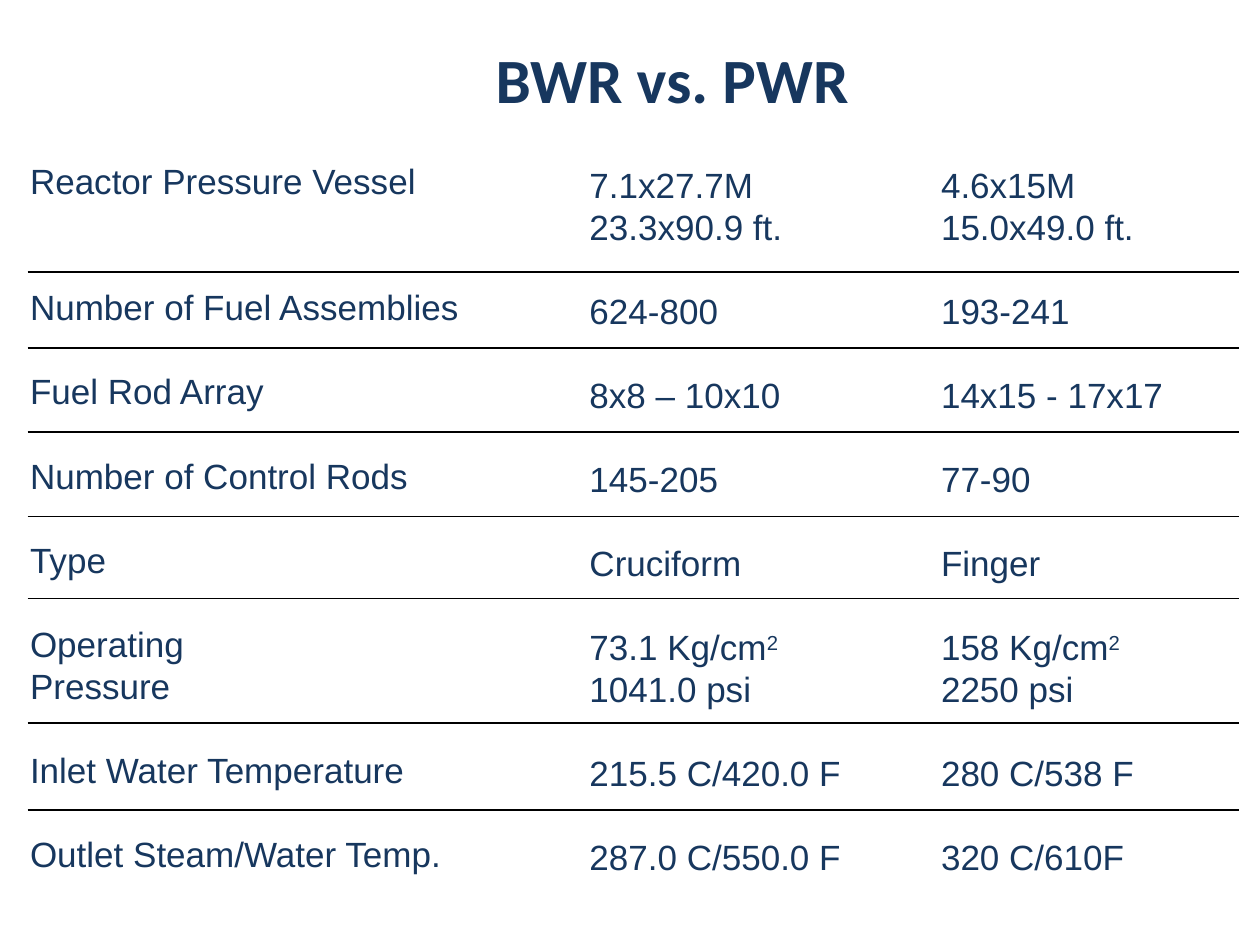
from pptx import Presentation
from pptx import util as u
from pptx.dml import color
from pptx.enum import shapes, text
from pptx.oxml import ns
from lxml import etree

HUES = {"navy": "17375E", "black": "000000"}
HEAD = {"name": "Calibri", "size": u.Pt(36), "bold": True}
BODY = {"name": "Arial", "size": u.Pt(20)}
PITCH = 24


def hue(name):
    return color.RGBColor.from_string(HUES[name])


class Deck:
    def __init__(self):
        self.show = Presentation()
        self.show.slide_width = u.Pt(720)
        self.show.slide_height = u.Pt(540)
        self.slide = self.show.slides.add_slide(self.show.slide_layouts[6])

    def frame(self, box, form):
        frame = self.slide.shapes.add_textbox(*map(u.Pt, box)).text_frame
        for key, val in form.items():
            setattr(frame, key, val)
        return frame

    def run(self, para, words, style):
        run = para.add_run()
        run.text = words
        for key, val in style.items():
            setattr(run.font, key, val)
        run.font.color.rgb = hue("navy")
        return run

    def title(self, box, words):
        frame = self.frame(box, {"word_wrap": True,
                                 "vertical_anchor": text.MSO_ANCHOR.MIDDLE})
        para = frame.paragraphs[0]
        para.alignment = text.PP_ALIGN.CENTER
        self.run(para, words, HEAD)

    def column(self, box, cells):
        frame = self.frame(box, {"word_wrap": False,
                                 "auto_size": text.MSO_AUTO_SIZE.SHAPE_TO_FIT_TEXT})
        for row, (gap, lines) in enumerate(cells):
            for num, line in enumerate(lines.split("\n")):
                first = row == num == 0
                para = frame.paragraphs[0] if first else frame.add_paragraph()
                para.line_spacing = u.Pt(PITCH)
                para.space_before = u.Pt(0 if first or num else gap * PITCH)
                base, _, power = line.partition("^")
                self.run(para, base, BODY)
                if power:
                    run = self.run(para, power, BODY)
                    run.font._element.set("baseline", "30000")

    def rule(self, left, right, top):
        line = self.slide.shapes.add_connector(
            shapes.MSO_CONNECTOR.STRAIGHT, *map(u.Pt, (left, top, right, top)))
        line.line.color.rgb = hue("black")
        line.line.width = u.Pt(1)
        etree.SubElement(line._element.spPr, ns.qn("a:effectLst"))


ROWS = [
    ("Reactor Pressure Vessel", "7.1x27.7M\n23.3x90.9 ft.", "4.6x15M\n15.0x49.0 ft."),
    ("Number of Fuel Assemblies", "624-800", "193-241"),
    ("Fuel Rod Array", "8x8 – 10x10", "14x15 - 17x17"),
    ("Number of Control Rods", "145-205", "77-90"),
    ("Type", "Cruciform", "Finger"),
    ("Operating\nPressure", "73.1 Kg/cm^2\n1041.0 psi", "158 Kg/cm^2\n2250 psi"),
    ("Inlet Water Temperature", "215.5 C/420.0 F", "280 C/538 F"),
    ("Outlet Steam/Water Temp.", "287.0 C/550.0 F", "320 C/610F"),
]
BOXES = [(10.08, 87.84, 261.36, 419), (329.76, 90, 159.12, 419),
         (530.64, 90, 144.72, 419)]
RULES = [155.5, 198.7, 247, 295.2, 342, 413.3, 463]


def main():
    deck = Deck()
    deck.title((102.24, 0, 563.76, 90), "BWR vs. PWR")
    for col, box in enumerate(BOXES):
        cells = []
        for num, row in enumerate(ROWS):
            tall = max(cell.count("\n") for cell in ROWS[num - 1])
            cells.append((1 + tall - ROWS[num - 1][col].count("\n"), row[col]))
        deck.column(box, cells)
    for top in RULES:
        deck.rule(15.84, 707.8, top)
    deck.show.save("out.pptx")


if __name__ == "__main__":
    main()
